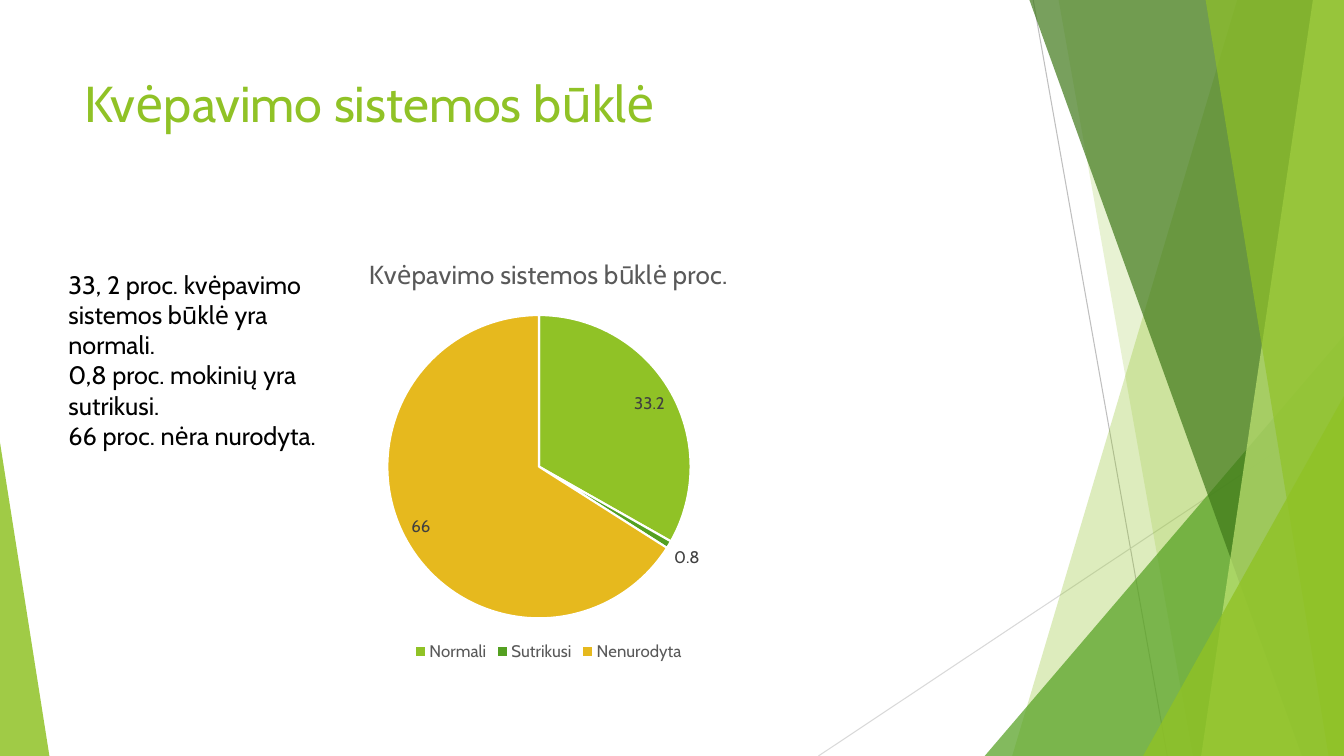
from lxml import etree
from pptx import Presentation
from pptx.chart.data import CategoryChartData
from pptx.dml.color import RGBColor
from pptx.enum.chart import XL_CHART_TYPE, XL_LABEL_POSITION, XL_LEGEND_POSITION
from pptx.enum.shapes import MSO_CONNECTOR, MSO_SHAPE
from pptx.oxml import parse_xml
from pptx.oxml.ns import nsdecls, qn
from pptx.util import Pt

PIE = XL_CHART_TYPE.PIE
INSIDE, OUTSIDE = XL_LABEL_POSITION.INSIDE_END, XL_LABEL_POSITION.OUTSIDE_END
BOTTOM = XL_LEGEND_POSITION.BOTTOM
STRAIGHT = MSO_CONNECTOR.STRAIGHT
TRIANGLE = MSO_SHAPE.ISOSCELES_TRIANGLE

FONT = "Cabin"
WIDTH, HEIGHT = 960, 540
BLEED = -0.6
COLORS = {
    "lime": "90C226", "green": "54A021", "forest": "3F7819", "pale": "C0E474",
    "gold": "E6B91E", "white": "FFFFFF", "black": "000000", "label": "404040",
    "caption": "595959", "rule": "BFBFBF", "light_rule": "D9D9D9",
}


def rgb(color):
    return RGBColor.from_string(COLORS[color])


def style_font(font, size, color):
    font.name = FONT
    font.size = Pt(size)
    font.bold = False
    font.color.rgb = rgb(color)


def write(paragraph, text, size=18, color="black"):
    run = paragraph.add_run()
    run.text = text
    style_font(run.font, size, color)


class SlideBuilder:
    def __init__(self, slide):
        self.shapes = slide.shapes

    def line(self, start, end, color):
        rule = self.shapes.add_connector(STRAIGHT, *map(Pt, start + end))
        rule.line.color.rgb = rgb(color)
        rule.line.width = Pt(0.75)
        etree.SubElement(rule.element.spPr, qn("a:effectLst"))

    def tint(self, shape, color, opacity):
        shape.shadow.inherit = False
        shape.fill.solid()
        shape.fill.fore_color.rgb = rgb(color)
        tone = shape.element.spPr.find(".//" + qn("a:srgbClr"))
        etree.SubElement(tone, qn("a:alpha"), val=str(opacity * 1000))
        shape.line.fill.background()

    def panel(self, top_x, bottom_x, color, opacity):
        outline = self.shapes.build_freeform(top_x, BLEED, scale=float(Pt(1)))
        outline.add_line_segments(
            [(WIDTH, BLEED), (WIDTH, HEIGHT), (bottom_x, HEIGHT)], close=True)
        self.tint(outline.convert_to_shape(), color, opacity)

    def triangle(self, left, top, width, apex, color, opacity):
        corner = self.shapes.add_shape(
            TRIANGLE, Pt(left), Pt(top), Pt(width), Pt(HEIGHT - top))
        corner.adjustments[0] = apex
        self.tint(corner, color, opacity)

    def text(self, box, paragraphs, **style):
        frame = self.shapes.add_textbox(*map(Pt, box)).text_frame
        frame.word_wrap = True
        for index, content in enumerate(paragraphs):
            paragraph = frame.add_paragraph() if index else frame.paragraphs[0]
            write(paragraph, content, **style)

    def pie(self, box, title, slices, plot_layout):
        data = CategoryChartData()
        data.categories = [name for name, *_ in slices]
        data.add_series("Series 1", [value for _, value, *_ in slices])
        chart = self.shapes.add_chart(PIE, *map(Pt, box), data).chart
        style_font(chart.font, 10, "black")
        chart.has_title = True
        write(chart.chart_title.text_frame.paragraphs[0], title, 18.6, "caption")
        chart.has_legend = True
        chart.legend.position = BOTTOM
        chart.legend.include_in_layout = False
        style_font(chart.legend.font, 12, "caption")

        plot = chart.plots[0]
        plot.vary_by_categories = True
        series = plot.series[0]
        labels = series.data_labels
        labels.show_value = True
        labels.position = INSIDE
        style_font(labels.font, 12, "label")
        for index, (_, _, color, position) in enumerate(slices):
            point = series.points[index]
            point.format.fill.solid()
            point.format.fill.fore_color.rgb = rgb(color)
            point.format.line.color.rgb = rgb("white")
            point.format.line.width = Pt(1.5)
            style_font(point.data_label.font, 12, "label")
            point.data_label.position = position

        area = chart.element.find(".//" + qn("c:plotArea"))
        for layout in area.findall(qn("c:layout")):
            area.remove(layout)
        places = "".join(
            f'<c:{tag} val="{value}"/>' for tag, value in plot_layout.items())
        area.insert(0, parse_xml(
            f'<c:layout {nsdecls("c")}><c:manualLayout><c:layoutTarget val="inner"/>'
            f'<c:xMode val="edge"/><c:yMode val="edge"/>{places}'
            "</c:manualLayout></c:layout>"))


def main():
    deck = Presentation()
    deck.slide_width, deck.slide_height = Pt(WIDTH), Pt(HEIGHT)
    page = SlideBuilder(deck.slides.add_slide(deck.slide_layouts[6]))

    page.line((738, 0), (833.8, HEIGHT), "rule")
    page.line((WIDTH, 290.2), (584.6, HEIGHT), "light_rule")
    page.panel(884.2, 722.9, "lime", 30)
    page.panel(756, 851.8, "lime", 20)
    page.triangle(703.4, 239.8, 256.6, 1, "green", 72)
    page.panel(735.1, 929.5, "forest", 70)
    page.panel(938.2, 858.2, "pale", 70)
    page.panel(861.1, 949, "lime", 65)
    page.triangle(816.5, 283, 143.5, 1, "lime", 80)
    page.triangle(0, 316.1, 35.3, 0, "lime", 85)

    page.text((53.3, 48, 677, 104), ["Kvėpavimo sistemos būklė"],
              size=36, color="lime")
    page.pie(
        (53.3, 170, 677, 305.5), "Kvėpavimo sistemos būklė proc.",
        [("Normali", 33.2, "lime", INSIDE),
         ("Sutrikusi", 0.8, "green", OUTSIDE),
         ("Nenurodyta", 66, "gold", INSIDE)],
        {"x": 0.33, "y": 0.18, "w": 0.32, "h": 0.71})
    page.text((41.8, 188.6, 198.7, 160), [
        "33, 2 proc. kvėpavimo sistemos būklė yra normali.",
        "0,8 proc. mokinių yra sutrikusi.",
        "66 proc. nėra nurodyta.",
    ])

    deck.save("out.pptx")


if __name__ == "__main__":
    main()
